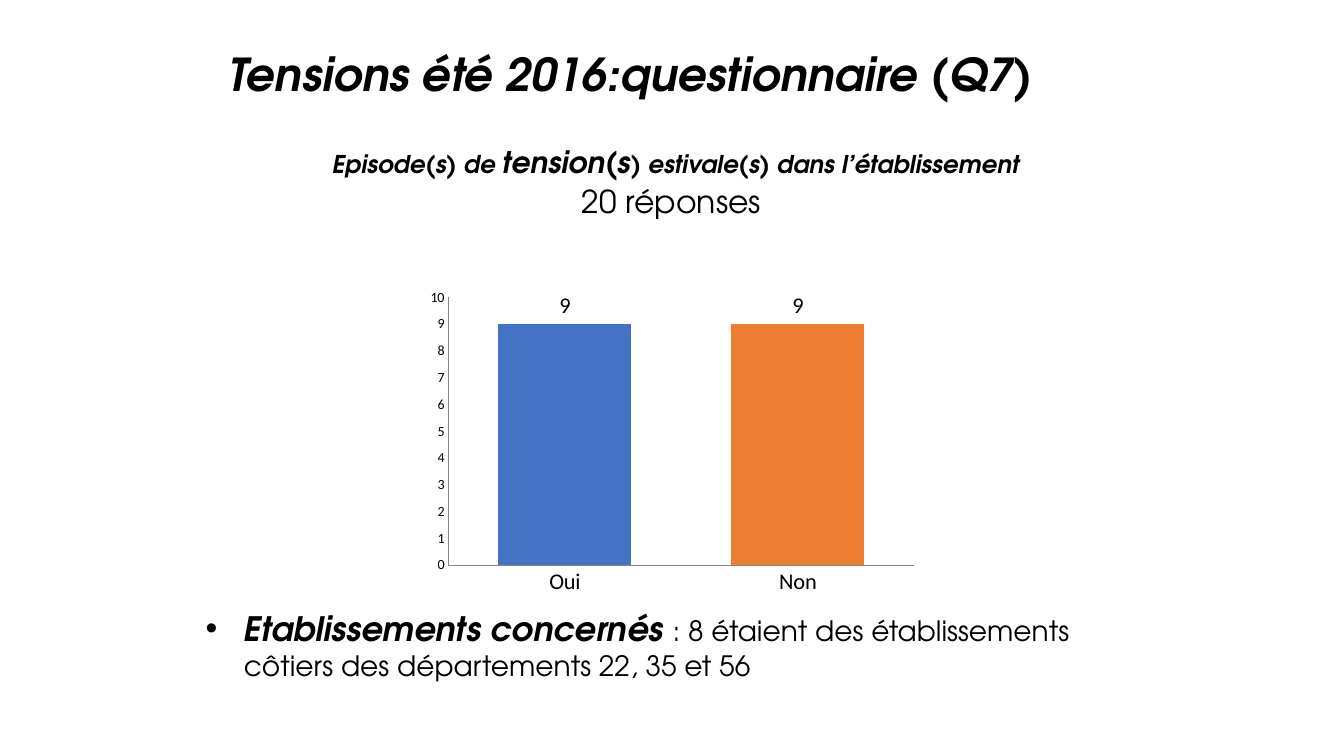
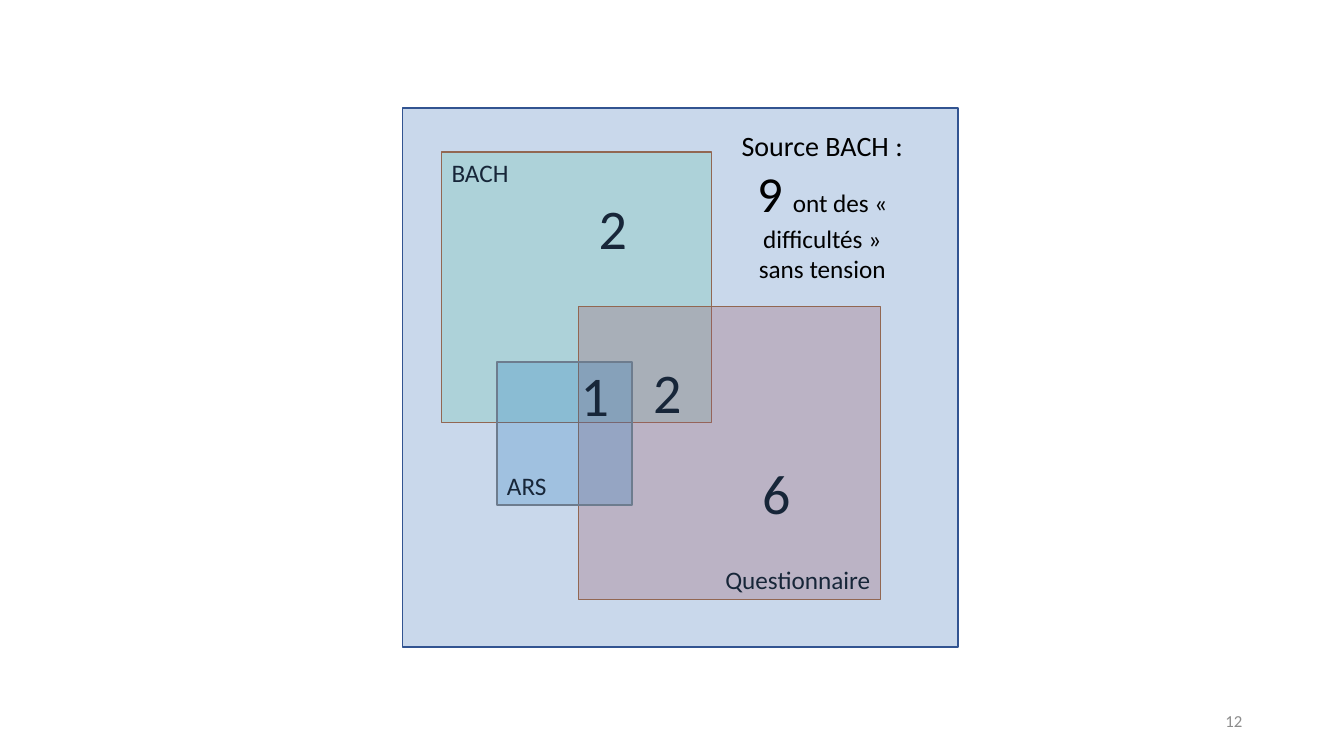
from dataclasses import dataclass
from typing import NamedTuple

from lxml import etree
from pptx import Presentation
from pptx.chart import data as cd
from pptx.dml.color import RGBColor
from pptx.enum import chart as ec, shapes as es, text as et
from pptx.oxml import ns
from pptx.util import Inches, Pt


@dataclass(frozen=True)
class Theme:
    display: str = "TeX Gyre Adventor"
    body: str = "Calibri"
    ink: str = "000000"
    muted: str = "8C8C8C"
    axis: str = "868686"
    yes: str = "4472C4"
    no: str = "ED7D31"
    green: str = "00CC66"
    red: str = "C0504D"
    blue: str = "0070C0"
    pale: str = "4F81BD"
    rust: str = "AF5C24"
    grey: str = "7A7A7A"
    navy: str = "325491"
    title: float = 32.4
    lead: float = 17.5
    lead_big: float = 21.2
    answers: float = 22.5
    finding: float = 24
    detail: float = 20
    tick: float = 10
    label: float = 16
    small: float = 12
    zone: float = 18
    count: float = 40
    total: float = 36
    gap: float = 32


T = Theme()
ALIGN = et.PP_ALIGN
ANCHOR = et.MSO_ANCHOR


class Box(NamedTuple):
    x: float
    y: float
    w: float
    h: float

    def emu(self) -> tuple:
        return tuple(Inches(v) for v in self)


@dataclass(frozen=True)
class Run:
    text: str
    size: float
    strong: bool = False
    font: str = T.body
    color: str = T.ink


@dataclass(frozen=True)
class Para:
    runs: list
    align: ALIGN = ALIGN.LEFT
    spacing: float = 1.0
    before: float = 0
    bullet: bool = False


@dataclass(frozen=True)
class Zone:
    box: Box
    fill: str
    alpha: int
    line: str
    name: str = ""
    align: ALIGN = ALIGN.LEFT
    anchor: ANCHOR = ANCHOR.TOP


@dataclass(frozen=True)
class Count:
    text: str
    x: float
    y: float


def rgb(value: str) -> RGBColor:
    return RGBColor.from_string(value)


def display(text: str, size: float, strong: bool = True) -> Run:
    return Run(text, size, strong, T.display)


def write(tf, paras: list, anchor: ANCHOR = ANCHOR.TOP) -> None:
    tf.word_wrap = True
    tf.vertical_anchor = anchor
    for i, para in enumerate(paras):
        p = tf.paragraphs[0] if i == 0 else tf.add_paragraph()
        p.alignment = para.align
        p.line_spacing = para.spacing
        p.space_before = Pt(para.before)
        if para.bullet:
            ppr = p._p.get_or_add_pPr()
            ppr.set("marL", str(Inches(0.38)))
            ppr.set("indent", str(-Inches(0.38)))
            etree.SubElement(ppr, ns.qn("a:buFont")).set("typeface", "Arial")
            etree.SubElement(ppr, ns.qn("a:buChar")).set("char", "•")
        for run in para.runs:
            r = p.add_run()
            r.text = run.text
            r.font.name = run.font
            r.font.size = Pt(run.size)
            r.font.bold = r.font.italic = run.strong
            r.font.color.rgb = rgb(run.color)


def add_text(s, box: Box, paras: list, anchor: ANCHOR = ANCHOR.TOP) -> None:
    write(s.shapes.add_textbox(*box.emu()).text_frame, paras, anchor)


def add_zone(s, zone: Zone) -> None:
    sp = s.shapes.add_shape(es.MSO_SHAPE.RECTANGLE, *zone.box.emu())
    sp.shadow.inherit = False
    sp.fill.solid()
    sp.fill.fore_color.rgb = rgb(zone.fill)
    color = sp._element.spPr.find(ns.qn("a:solidFill"))[0]
    etree.SubElement(color, ns.qn("a:alpha")).set("val", str(zone.alpha * 1000))
    sp.line.color.rgb = rgb(zone.line)
    sp.line.width = Pt(1)
    if zone.name:
        write(sp.text_frame, [Para([Run(zone.name, T.zone)], zone.align)], zone.anchor)


def add_answer_chart(s, box: Box) -> None:
    data = cd.CategoryChartData()
    data.categories = ["Oui", "Non"]
    data.add_series("Series 1", [9, 9])
    kind = ec.XL_CHART_TYPE.COLUMN_CLUSTERED
    chart = s.shapes.add_chart(kind, *box.emu(), data).chart
    chart.has_legend = chart.has_title = False
    chart.font.name = T.body
    chart.font.size = Pt(T.tick)
    chart.font.color.rgb = rgb(T.ink)
    for axis in (chart.category_axis, chart.value_axis):
        axis.has_major_gridlines = False
        axis.major_tick_mark = axis.minor_tick_mark = ec.XL_TICK_MARK.NONE
        axis.format.line.color.rgb = rgb(T.axis)
        axis.format.line.width = Pt(0.75)
    chart.category_axis.tick_labels.font.size = Pt(T.label)
    chart.value_axis.minimum_scale = 0
    chart.value_axis.maximum_scale = 10
    chart.value_axis.major_unit = 1
    plot = chart.plots[0]
    plot.gap_width = 75
    plot.vary_by_categories = False
    series = plot.series[0]
    for i, color in enumerate((T.yes, T.no)):
        fill = series.points[i].format.fill
        fill.solid()
        fill.fore_color.rgb = rgb(color)
    labels = series.data_labels
    labels.show_value = True
    labels.position = ec.XL_LABEL_POSITION.OUTSIDE_END
    labels.font.size = Pt(T.label)


def build_survey(s) -> None:
    title = Para([display("Tensions été 2016:questionnaire (Q7)", T.title)], spacing=0.9)
    add_text(s, Box(2.17, 0.3, 9, 0.93), [title], ANCHOR.MIDDLE)
    lead = [
        display("Episode(s) de ", T.lead),
        display("tension(s", T.lead_big),
        display(") estivale(s) dans l’établissement", T.lead),
    ]
    answers = [display("20 réponses ", T.answers, False)]
    add_text(s, Box(1.94, 1.47, 9.53, 1.1),
             [Para(runs, ALIGN.CENTER, 0.7, 10) for runs in (lead, answers)])
    finding = [
        display("Etablissements concernés ", T.finding),
        display(": 8 étaient des établissements côtiers des départements 22, 35 et 56",
                T.detail, False),
    ]
    add_text(s, Box(1.94, 5.98, 9.72, 0.84), [Para(finding, bullet=True)])
    add_answer_chart(s, Box(4.17, 2.81, 5, 3.17))


def build_sources(s) -> None:
    number = Para([Run("12", T.small, color=T.muted)], ALIGN.RIGHT)
    add_text(s, Box(9.42, 6.95, 3, 0.4), [number], ANCHOR.MIDDLE)
    zones = [
        Zone(Box(4.38, 1.51, 2.68, 2.68), T.green, 16, T.rust, "BACH"),
        Zone(Box(5.74, 3.04, 2.99, 2.91), T.red, 30, T.rust, "Questionnaire",
             ALIGN.RIGHT, ANCHOR.BOTTOM),
        Zone(Box(4.93, 3.59, 1.34, 1.42), T.blue, 23, T.grey, "ARS",
             anchor=ANCHOR.BOTTOM),
    ]
    for zone in zones:
        add_zone(s, zone)
    counts = [Count("2", 5.84, 1.87), Count("1", 5.66, 3.53),
              Count("2", 6.38, 3.5), Count("6", 7.46, 4.5)]
    for count in counts:
        add_text(s, Box(count.x, count.y, 1.26, 0.77),
                 [Para([Run(count.text, T.count)])])
    add_zone(s, Zone(Box(3.99, 1.07, 5.51, 5.35), T.pale, 30, T.navy))
    heading = [Run("Source BACH :", T.detail)]
    remark = [Run("9", T.total), Run(" ", T.gap),
              Run("ont des « difficultés » sans tension", T.zone)]
    add_text(s, Box(7.25, 1.23, 1.81, 1.65),
             [Para(runs, ALIGN.CENTER) for runs in (heading, remark)])


def main() -> None:
    prs = Presentation()
    prs.slide_width, prs.slide_height = Inches(13.33), Inches(7.5)
    for build in (build_survey, build_sources):
        build(prs.slides.add_slide(prs.slide_layouts[6]))
    prs.save("out.pptx")


if __name__ == "__main__":
    main()
